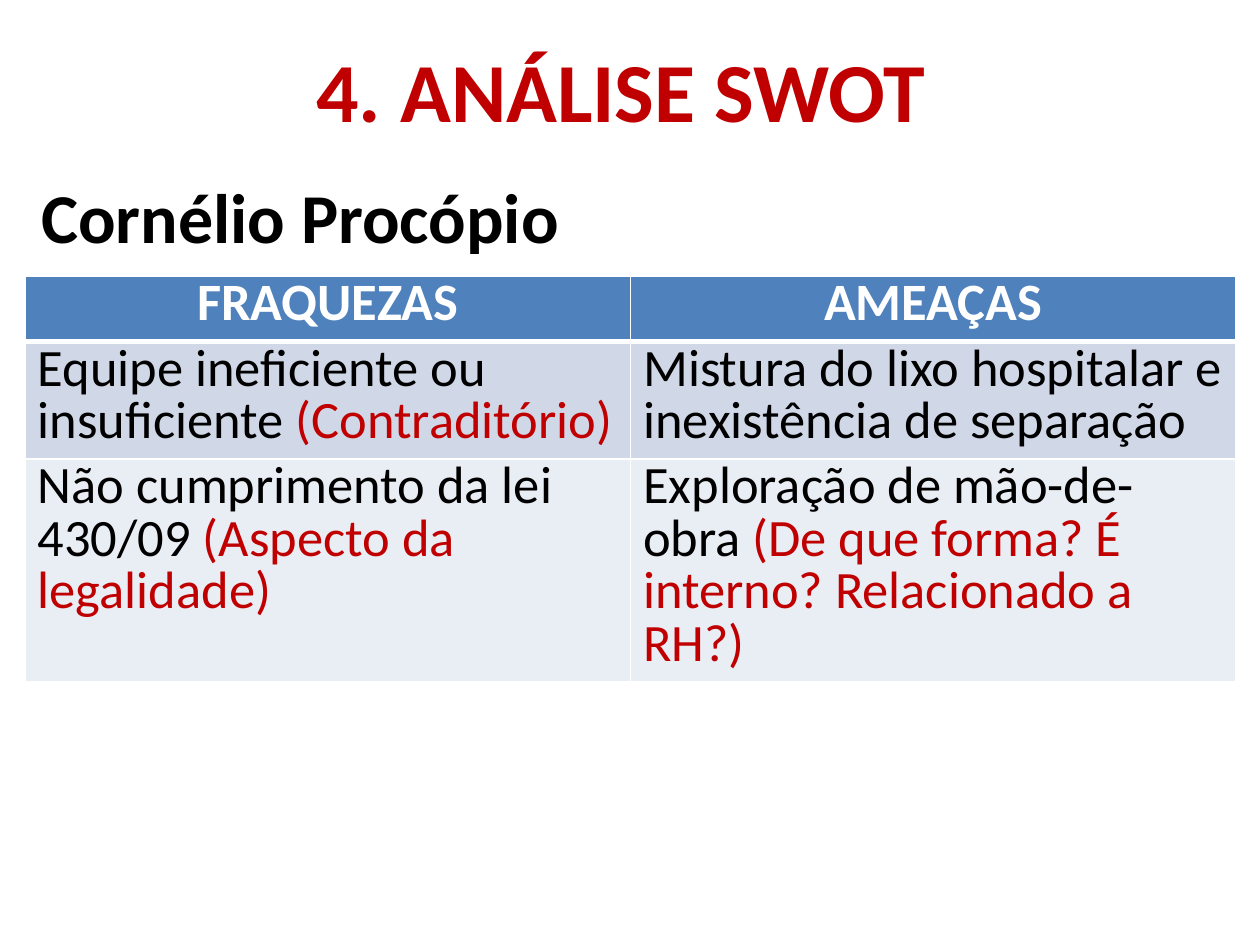
import pptx
import pptx.dml.color
import pptx.enum.text
import pptx.oxml
import pptx.oxml.ns
import pptx.util

FONT = "Calibri"
COLORS = {
    "accent": "C00000",
    "text": "000000",
    "white": "FFFFFF",
    "header": "4F81BD",
    "band_dark": "D0D8E8",
    "band_light": "E9EDF4",
}
HEADINGS = ["FRAQUEZAS", "AMEAÇAS"]
# Each cell holds a statement and the reviewer's remark on it.
FINDINGS = [
    [("Equipe ineficiente ou insuficiente ", "(Contraditório)"),
     ("Mistura do lixo hospitalar e inexistência de separação", "")],
    [("Não cumprimento da lei 430/09 ", "(Aspecto da legalidade)"),
     ("Exploração de mão-de-obra ",
      "(De que forma? É interno? Relacionado a RH?)")],
]
ROW_HEIGHTS = [0.52, 0.93, 1.77]


def color(name):
    return pptx.dml.color.RGBColor.from_string(COLORS[name])


def inches(box):
    return [pptx.util.Inches(length) for length in box]


def style(font, size, name, bold=False):
    font.name = FONT
    font.size = pptx.util.Pt(size)
    font.bold = bold
    font.color.rgb = color(name)


def add_heading(page, box, text, size, name, centered=False):
    frame = page.shapes.add_textbox(*inches(box)).text_frame
    frame.word_wrap = True
    para = frame.paragraphs[0]
    para.text = text
    style(para.font, size, name, bold=True)
    if centered:
        frame.vertical_anchor = pptx.enum.text.MSO_ANCHOR.MIDDLE
        para.alignment = pptx.enum.text.PP_ALIGN.CENTER


def set_borders(cell, top=1, bottom=1):
    """Draw white cell borders, with widths in points."""
    properties = cell._tc.get_or_add_tcPr()
    widths = {"lnL": 1, "lnR": 1, "lnT": top, "lnB": bottom}
    for position, (tag, width) in enumerate(widths.items()):
        properties.insert(position, pptx.oxml.parse_xml(
            f'<a:{tag} {pptx.oxml.ns.nsdecls("a")} w="{pptx.util.Pt(width)}">'
            f'<a:solidFill><a:srgbClr val="{COLORS["white"]}"/></a:solidFill>'
            f'</a:{tag}>'))


def fill_cell(cell, fill, pieces, bold=False, centered=False):
    """Write coloured (text, colour) pieces on a filled cell."""
    cell.fill.solid()
    cell.fill.fore_color.rgb = color(fill)
    para = cell.text_frame.paragraphs[0]
    para.line_spacing = pptx.util.Pt(30)
    if centered:
        para.alignment = pptx.enum.text.PP_ALIGN.CENTER
    for text, name in pieces:
        if text:
            span = para.add_run()
            span.text = text
            style(span.font, 30, name, bold)


def add_swot_table(page, box):
    table = page.shapes.add_table(
        len(ROW_HEIGHTS), len(HEADINGS), *inches(box)).table
    for column in table.columns:
        column.width = pptx.util.Inches(box[2] / len(HEADINGS))
    for row, height in zip(table.rows, ROW_HEIGHTS):
        row.height = pptx.util.Inches(height)

    for column, heading in enumerate(HEADINGS):
        cell = table.cell(0, column)
        fill_cell(cell, "header", [(heading, "white")], True, True)
        set_borders(cell, bottom=3)
    for row, findings in enumerate(FINDINGS, start=1):
        fill = "band_dark" if row % 2 else "band_light"
        for column, (statement, remark) in enumerate(findings):
            cell = table.cell(row, column)
            fill_cell(cell, fill, [(statement, "text"), (remark, "accent")])
            set_borders(cell, top=3 if row == 1 else 1)


def main():
    deck = pptx.Presentation()
    deck.slide_width, deck.slide_height = inches((10, 7.5))
    page = deck.slides.add_slide(deck.slide_layouts[6])
    add_swot_table(page, (0.2, 2.19, 9.61, sum(ROW_HEIGHTS)))
    add_heading(page, (0.43, 0.08, 9, 1.25), "4. ANÁLISE SWOT", 48, "accent",
                centered=True)
    add_heading(page, (0.23, 1.33, 5.16, 0.77), "Cornélio Procópio", 40, "text")
    deck.save("out.pptx")


if __name__ == "__main__":
    main()
